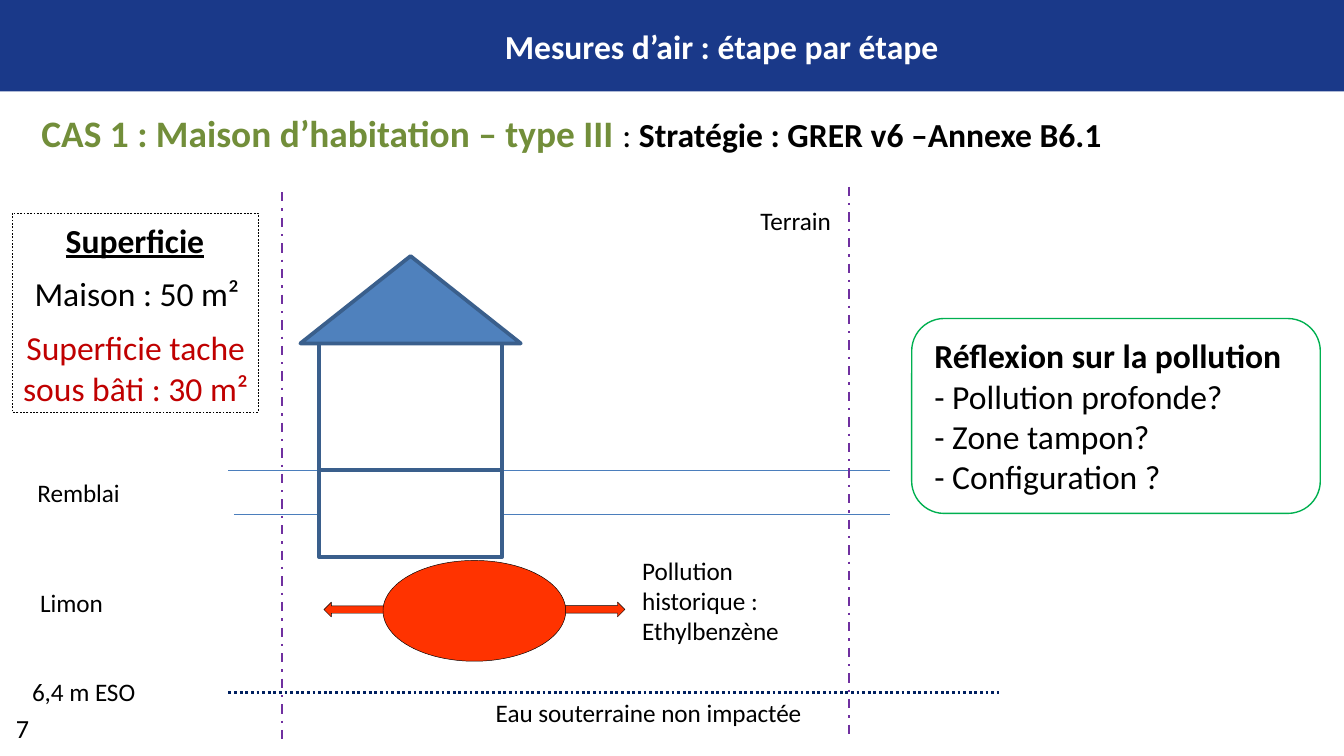
from dataclasses import dataclass

from pptx import Presentation
from pptx.dml.color import RGBColor
from pptx.enum.dml import MSO_LINE
from pptx.enum.shapes import MSO_CONNECTOR, MSO_SHAPE
from pptx.enum.text import MSO_ANCHOR, MSO_AUTO_SIZE, PP_ALIGN
from pptx.util import Inches, Pt
from lxml.etree import SubElement
from pptx.oxml.ns import qn


@dataclass(frozen=True)
class Theme:
    font: str = "Calibri"
    band: str = "1A3989"
    white: str = "FFFFFF"
    black: str = "000000"
    case: str = "728E3A"
    wall: str = "3A5F8C"
    roof: str = "4F81BD"
    soil: str = "4B7EBC"
    water: str = "002060"
    plot: str = "7030A0"
    plume: str = "FF3300"
    alert: str = "C00000"
    frame: str = "00B050"
    heading: float = 20
    body: float = 18
    number: float = 14
    label: float = 13.5


T = Theme()
CELL = Inches(0.1)


@dataclass(frozen=True)
class Box:
    x: float
    y: float
    w: float
    h: float

    def sub(self, x, y, w, h):
        return Box(self.x + x, self.y + y, w, h)

    def emu(self):
        return [round(v * CELL) for v in (self.x, self.y, self.w, self.h)]


def style(font, size, color=T.black, bold=False):
    font.name, font.size, font.bold = T.font, Pt(size), bold
    font.color.rgb = RGBColor.from_string(color)


def write(sp, lines, size, color=T.black, bold=False,
          align=PP_ALIGN.LEFT, anchor=MSO_ANCHOR.TOP):
    tf = sp.text_frame
    tf.word_wrap, tf.vertical_anchor = True, anchor
    tf.auto_size = MSO_AUTO_SIZE.NONE
    tf.text = "\n".join(lines)
    for p in tf.paragraphs:
        p.alignment = align
        style(p.font, size, color, bold)
    return tf


def label(s, box, *lines, size=T.label):
    sp = s.shapes.add_textbox(*box.emu())
    return write(sp, lines, size)


def shape(s, kind, box, fill=None, line=None, width=0.25):
    sp = s.shapes.add_shape(kind, *box.emu())
    sp.shadow.inherit = False
    if fill:
        sp.fill.solid()
        sp.fill.fore_color.rgb = RGBColor.from_string(fill)
    else:
        sp.fill.background()
    if line:
        sp.line.color.rgb = RGBColor.from_string(line)
        sp.line.width = Pt(width)
    else:
        sp.line.fill.background()
    return sp


def rule(s, box, color, width, dash=None):
    x, y, w, h = box.emu()
    c = s.shapes.add_connector(MSO_CONNECTOR.STRAIGHT, x, y, x + w, y + h)
    c.line.color.rgb = RGBColor.from_string(color)
    c.line.width = Pt(width)
    if dash:
        c.line.dash_style = dash
    SubElement(c.element.spPr, qn("a:effectLst"))


def header(s, box):
    title = s.shapes.title
    band = shape(s, MSO_SHAPE.RECTANGLE, box, T.band)
    title.element.addprevious(band.element)
    title.left, title.top, title.width, title.height = box.sub(8.7, 1.4, 90, 4).emu()
    write(title, ["Mesures d’air : étape par étape"], T.body, T.white, True,
          PP_ALIGN.CENTER, MSO_ANCHOR.MIDDLE)


def case_line(s, box):
    p = label(s, box, "").paragraphs[0]
    for text, size, color, bold in (
            ("CAS 1 : Maison d’habitation – type III ", T.heading, T.case, True),
            (": ", T.body, T.black, False),
            ("Stratégie : GRER v6 –Annexe B6.1", T.body, T.black, True)):
        r = p.add_run()
        r.text = text
        style(r.font, size, color, bold)


def ground(s, box):
    for x, y, w in ((17, 21.1, 49.2), (17.4, 24.4, 48.8)):
        rule(s, box.sub(x, y, w, 0), T.soil, 0.75)
    rule(s, box.sub(17, 37.6, 57.3, 0), T.water, 1.5, MSO_LINE.ROUND_DOT)
    for x, y in ((21, 0.4), (63.16, 0)):
        rule(s, box.sub(x, y, 0, 40.8), T.plot, 1.25, MSO_LINE.DASH_DOT)
    for text, x, y, w in (
            ("Terrain", 55.6, 0.9, 10.6),
            ("Remblai", 1.8, 21.1, 10.6),
            ("Limon", 2, 29.3, 18.4),
            ("6,4 m ESO", 1.4, 35.9, 10.6),
            ("Eau souterraine non impactée", 35.9, 37.5, 28.2)):
        label(s, box.sub(x, y, w, 3.3), text)


def house(s, box):
    roof, floor, cellar, eave = 6.5, 9.4, 6.5, 1.4
    width = box.w - 2 * eave
    for kind, part, fill in (
            (MSO_SHAPE.RECTANGLE, box.sub(eave, roof, width, floor), None),
            (MSO_SHAPE.ISOSCELES_TRIANGLE, box.sub(0, 0, box.w, roof), T.roof),
            (MSO_SHAPE.RECTANGLE, box.sub(eave, roof + floor, width, cellar), T.white)):
        shape(s, kind, part, fill, T.wall, 2)


def pollution(s, box):
    for x, turn in ((0, 180), (box.w - 4.7, 0)):
        arrow = shape(s, MSO_SHAPE.RIGHT_ARROW, box.sub(x, 3.1, 4.7, 1.1),
                      T.plume, T.black)
        arrow.rotation = turn
    shape(s, MSO_SHAPE.OVAL, box.sub(4.4, 0, 13.6, box.h), T.plume, T.black)
    label(s, box.sub(box.w + 0.3, -0.9, 13.9, 7.8),
          "Pollution historique :", "Ethylbenzène")


def areas(s, box):
    for text, part, color in (
            ("Superficie tache sous bâti : 30 m²", box.sub(-0.7, 7.6, 19.8, 7.8), T.alert),
            ("Maison : 50 m²", box.sub(0.2, 3.7, 18.2, 4.5), T.black)):
        sp = shape(s, MSO_SHAPE.ROUNDED_RECTANGLE, part)
        tf = write(sp, [text], T.body, color, align=PP_ALIGN.CENTER,
                   anchor=MSO_ANCHOR.MIDDLE)
        tf.margin_left = tf.margin_right = Inches(0.05)
    frame = shape(s, MSO_SHAPE.RECTANGLE, box, line=T.black)
    frame.line.dash_style = MSO_LINE.DASH
    tf = write(frame, ["Superficie"], T.body, bold=True, align=PP_ALIGN.CENTER)
    tf.paragraphs[0].font.underline = True


def reflection(s, box):
    sp = shape(s, MSO_SHAPE.ROUNDED_RECTANGLE, box, line=T.frame, width=0.75)
    tf = write(sp, ["Réflexion sur la pollution", "- Pollution profonde?",
                    "- Zone tampon?", "- Configuration ?"],
               T.body, anchor=MSO_ANCHOR.MIDDLE)
    tf.paragraphs[0].font.bold = True


def main():
    prs = Presentation()
    prs.slide_width = Inches(10)
    prs.slide_height = prs.slide_width * 9 // 16
    s = prs.slides.add_slide(prs.slide_layouts[5])
    header(s, Box(0, 0, 100, 6.8))
    label(s, Box(0.2, 52.5, 5.3, 3.4), "7", size=T.number)
    ground(s, Box(0, 13.9, 74.3, 41.2))
    house(s, Box(22.35, 19.05, 16.4, 22.4))
    pollution(s, Box(24.1, 41.7, 22.4, 7.5))
    case_line(s, Box(2.1, 7.7, 86.9, 4.4))
    reflection(s, Box(67.84, 23.7, 30.4, 14.5))
    areas(s, Box(0.9, 15.85, 18.3, 14.8))
    prs.save("out.pptx")


if __name__ == "__main__":
    main()
